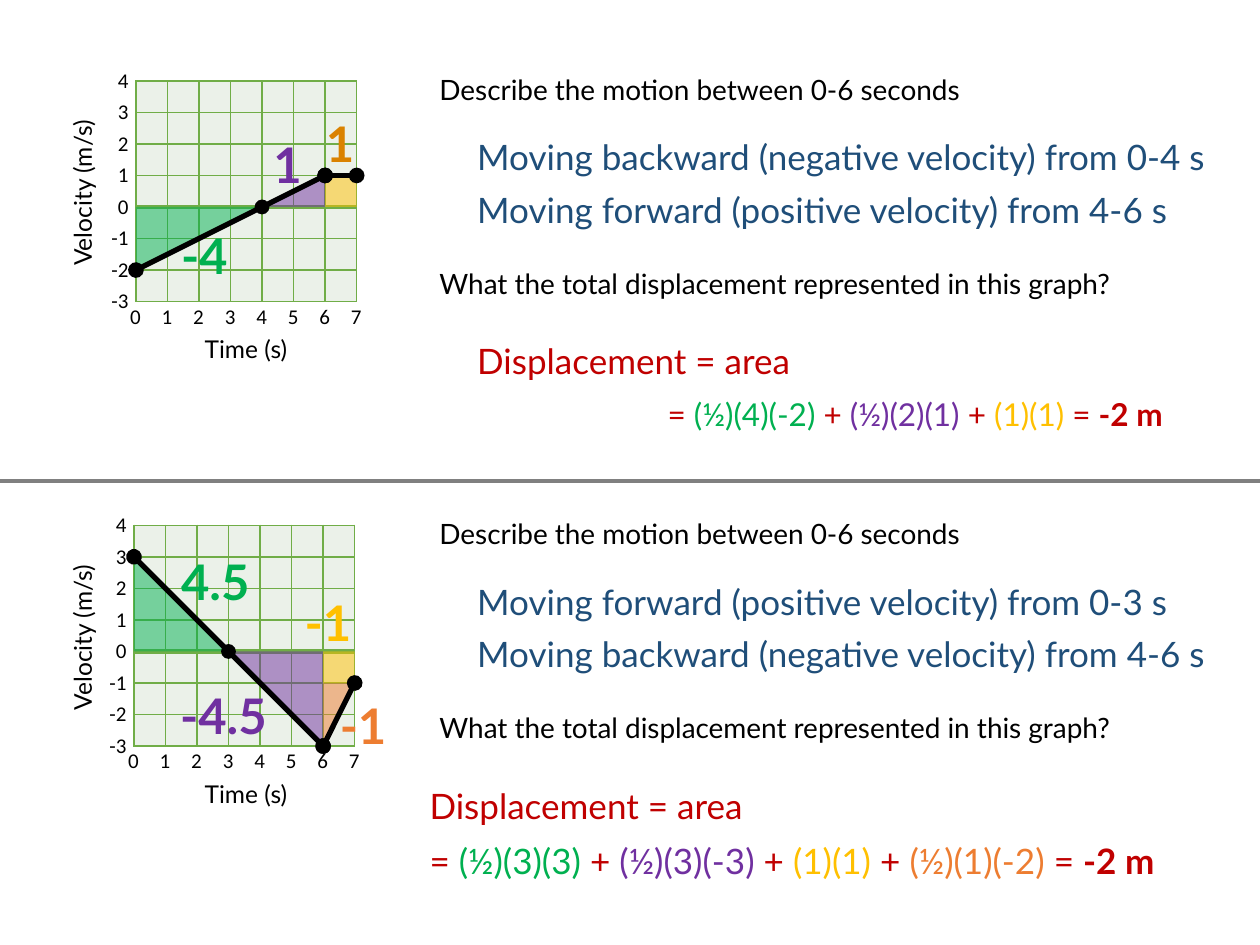
"""Build a slide of two velocity-time graphs with their displacement worked out."""
from lxml import etree
from pptx import Presentation
from pptx.dml.color import RGBColor
from pptx.enum.shapes import MSO_CONNECTOR, MSO_SHAPE
from pptx.enum.text import MSO_AUTO_SIZE, PP_ALIGN
from pptx.oxml.ns import qn
from pptx.util import Cm, Pt

LEFT, CENTER, RIGHT = PP_ALIGN.LEFT, PP_ALIGN.CENTER, PP_ALIGN.RIGHT
TRIANGLE, RECTANGLE, OVAL = MSO_SHAPE.ISOSCELES_TRIANGLE, MSO_SHAPE.RECTANGLE, MSO_SHAPE.OVAL
STRAIGHT = MSO_CONNECTOR.STRAIGHT
FIT_TEXT = MSO_AUTO_SIZE.SHAPE_TO_FIT_TEXT
COUNT, MAX_VELOCITY, GRID = 7, 4, 4.45
CELL = GRID / COUNT
BLACK, RED, BLUE, GRAY = "000000", "C00000", "1F4E79", "808080"
GREEN, PURPLE, GOLD, ORANGE, AMBER = "00B050", "7030A0", "FFC000", "ED7D31", "DA8200"
GRID_LINE, GRID_FILL = "70AD47", "EBF1E9"

PANELS = [
    dict(
        origin=(2.74, 1.63),
        areas=[(TRIANGLE, 0, 0, 4, 2, "HV", GREEN), (TRIANGLE, 4, 1, 2, 1, "", PURPLE),
               (RECTANGLE, 6, 1, 1, 1, "", GOLD)],
        segments=[((6, 1), (0, -2)), ((6, 1), (7, 1))],
        crossing=4,
        area_values=[("-4", 3.4, 4.42, 1.5, GREEN), ("1", 5.26, 2.59, 1.09, PURPLE),
                     ("1", 6.32, 2.16, 1.09, AMBER)],
        motion=["Moving backward (negative velocity) from 0-4 s",
                "Moving forward (positive velocity) from 4-6 s"],
        heading_left=9.37,
        equation_box=(13.21, 11.48, 1.02, 18),
        equation=[("= ", RED), ("(½)(4)(-2)", GREEN), (" + ", RED), ("(½)(2)(1) ", PURPLE),
                  ("+ ", RED), ("(1)(1) ", GOLD), ("= ", RED)],
    ),
    dict(
        origin=(2.7, 10.59),
        areas=[(TRIANGLE, 0, 3, 3, 3, "H", GREEN), (TRIANGLE, 3, 0, 3, 3, "V", PURPLE),
               (TRIANGLE, 6, -1, 1, 2, "HV", ORANGE), (RECTANGLE, 6, 0, 1, 1, "", GOLD)],
        segments=[((0, 3), (6, -3)), ((7, -1), (6, -3))],
        crossing=3,
        area_values=[("4.5", 3.4, 11, 1.93, GREEN), ("-4.5", 3.38, 13.69, 2.34, PURPLE),
                     ("-1", 5.89, 11.81, 1.5, GOLD), ("-1", 6.6, 13.89, 1.5, ORANGE)],
        motion=["Moving forward (positive velocity) from 0-3 s",
                "Moving backward (negative velocity) from 4-6 s"],
        heading_left=8.41,
        equation_box=(8.41, 16.59, 1.12, 20),
        equation=[("= ", RED), ("(½)(3)(3)", GREEN), (" + ", RED), ("(½)(3)(-3)", PURPLE),
                  (" + ", RED), ("(1)(1) ", GOLD), ("+ ", RED), ("(½)(1)(-2)", ORANGE),
                  (" = ", RED)],
    ),
]


def rgb(value):
    return RGBColor.from_string(value)


class GraphSlide:
    """Hold the fonts, the slide and the origin of the current graph."""
    font = "Lato"
    axis_font = "Calibri"

    def __init__(self, slide):
        self.slide = slide
        self.left = self.top = 0

    def point(self, time, velocity):
        return self.left + time * CELL, self.top + (MAX_VELOCITY - velocity) * CELL

    def text(self, lines, left, top, width, height, size, color=BLACK, align=LEFT,
             bold=None, font=None, shapes=None, rotation=0):
        box = (shapes or self.slide.shapes).add_textbox(Cm(left), Cm(top), Cm(width), Cm(height))
        box.rotation = rotation
        frame = box.text_frame
        frame.word_wrap = False
        frame.auto_size = FIT_TEXT
        frame.text = "\n".join(lines)
        for paragraph in frame.paragraphs:
            paragraph.alignment = align
            paragraph.font.name = font or self.font
            paragraph.font.size = Pt(size)
            paragraph.font.bold = bold
            paragraph.font.color.rgb = rgb(color)
        for paragraph in frame.paragraphs[:-1]:
            paragraph.space_after = Pt(6)
        return frame

    def equation(self, terms, answer, left, top, width, height, size):
        paragraph = self.text([""], left, top, width, height, size, RED).paragraphs[0]
        for term, color in terms + [(answer, RED)]:
            run = paragraph.add_run()
            run.text = term
            run.font.color.rgb = rgb(color)
        run.font.bold = True

    def shape(self, preset, left, top, width, height, color, flips="", alpha=None):
        shape = self.slide.shapes.add_shape(preset, Cm(left), Cm(top), Cm(width), Cm(height))
        shape.shadow.inherit = False
        shape.fill.solid()
        shape.fill.fore_color.rgb = rgb(color)
        shape.line.fill.background()
        properties = shape._element.spPr
        for axis in flips:
            properties.find(qn("a:xfrm")).set("flip" + axis, "1")
        if preset == TRIANGLE:
            shape.adjustments[0] = 1
        if alpha:
            fill_color = properties.find(qn("a:solidFill")).find(qn("a:srgbClr"))
            etree.SubElement(fill_color, qn("a:alpha"), val=str(alpha * 1000))

    def line(self, start, end, color, width, dots=False):
        ends = [Cm(value) for value in (*start, *end)]
        connector = self.slide.shapes.add_connector(STRAIGHT, *ends)
        connector.line.color.rgb = rgb(color)
        connector.line.width = Pt(width)
        properties = connector._element.spPr
        if dots:
            for tag in ("a:headEnd", "a:tailEnd"):
                etree.SubElement(properties.find(qn("a:ln")), qn(tag), type="oval")
        etree.SubElement(properties, qn("a:effectLst"))

    def border(self, cell, side, width):
        line = etree.SubElement(cell._tc.get_or_add_tcPr(), qn("a:ln" + side), w=str(Pt(width)))
        fill = etree.SubElement(line, qn("a:solidFill"))
        etree.SubElement(fill, qn("a:srgbClr"), val=GRID_LINE)

    def grid(self):
        table = self.slide.shapes.add_table(
            COUNT, COUNT, Cm(self.left), Cm(self.top), Cm(GRID), Cm(GRID)).table
        table.first_row = table.horz_banding = False
        for line in (*table.rows, *table.columns):
            if line in table.rows:
                line.height = Cm(CELL)
            else:
                line.width = Cm(CELL)
        for row in range(COUNT):
            for column in range(COUNT):
                cell = table.cell(row, column)
                cell.margin_left = cell.margin_right = cell.margin_top = cell.margin_bottom = 0
                cell.text_frame.paragraphs[0]._p.get_or_add_endParaRPr().set("sz", "800")
                widths = {"L": 1, "R": 1, "T": 3 if row == MAX_VELOCITY else 1,
                          "B": 3 if row == MAX_VELOCITY - 1 else 1}
                for side, width in widths.items():
                    self.border(cell, side, width)
                cell.fill.solid()
                cell.fill.fore_color.rgb = rgb(GRID_FILL)

    def axes(self):
        numbers = self.slide.shapes.add_group_shape().shapes
        style = dict(size=12, align=RIGHT, font=self.axis_font, shapes=numbers)
        for velocity in range(MAX_VELOCITY - COUNT, MAX_VELOCITY + 1):
            width = 0.86 if velocity < 0 else 0.74
            x, y = self.point(0, velocity)
            self.text([str(velocity)], x + 0.1 - width, y - 0.4, width, 0.76, **style)
        for time in range(COUNT + 1):
            x, y = self.point(time, MAX_VELOCITY)
            self.text([str(time)], x - 0.39, y + 4.36, 0.74, 0.76, **style)
        self.text(["Velocity (m/s)"], -0.1, self.top + 1.83, 3.53, 0.86, 14,
                  align=CENTER, rotation=270)
        self.text(["Time (s)"], 3.84, self.top + 4.98, 2.24, 0.86, 14, align=CENTER)

    def panel(self, origin, areas, segments, crossing, area_values, motion,
              heading_left, equation_box, equation):
        self.left, self.top = origin
        self.text(["Describe the motion between 0-6 seconds"],
                  8.61, self.top - 0.3, 11.1, 0.94, 16)
        self.text(["What the total displacement represented in this graph?"],
                  8.61, self.top + 3.61, 14.33, 0.94, 16)
        self.grid()
        self.axes()
        for preset, time, velocity, width, height, flips, color in areas:
            self.shape(preset, *self.point(time, velocity), width * CELL, height * CELL,
                       color, flips, alpha=50)
        for start, end in segments:
            self.line(self.point(*start), self.point(*end), BLACK, 3, dots=True)
        x, y = self.point(crossing, 0)
        self.shape(OVAL, x - 0.15, y - 0.15, 0.3, 0.3, BLACK)
        self.text(motion, 9.37, self.top + 0.98, 15.47, 2.18, 20, BLUE)
        self.text(["Displacement = area"], heading_left, self.top + 5.09, 7.01, 1.12, 20, RED)
        left, width, height, size = equation_box
        self.equation(equation, "-2 m", left, self.top + 6.21, width, height, size)
        for value, left, top, width, color in area_values:
            self.text([value], left, top, width, 1.45, 28, color, bold=True)


def main():
    presentation = Presentation()
    presentation.slide_width, presentation.slide_height = Cm(25.4), Cm(19.05)
    motion_slide = GraphSlide(presentation.slides.add_slide(presentation.slide_layouts[6]))
    motion_slide.line((0, 9.7), (25.4, 9.7), GRAY, 2.25)
    for panel in PANELS:
        motion_slide.panel(**panel)
    presentation.save("out.pptx")


if __name__ == "__main__":
    main()
